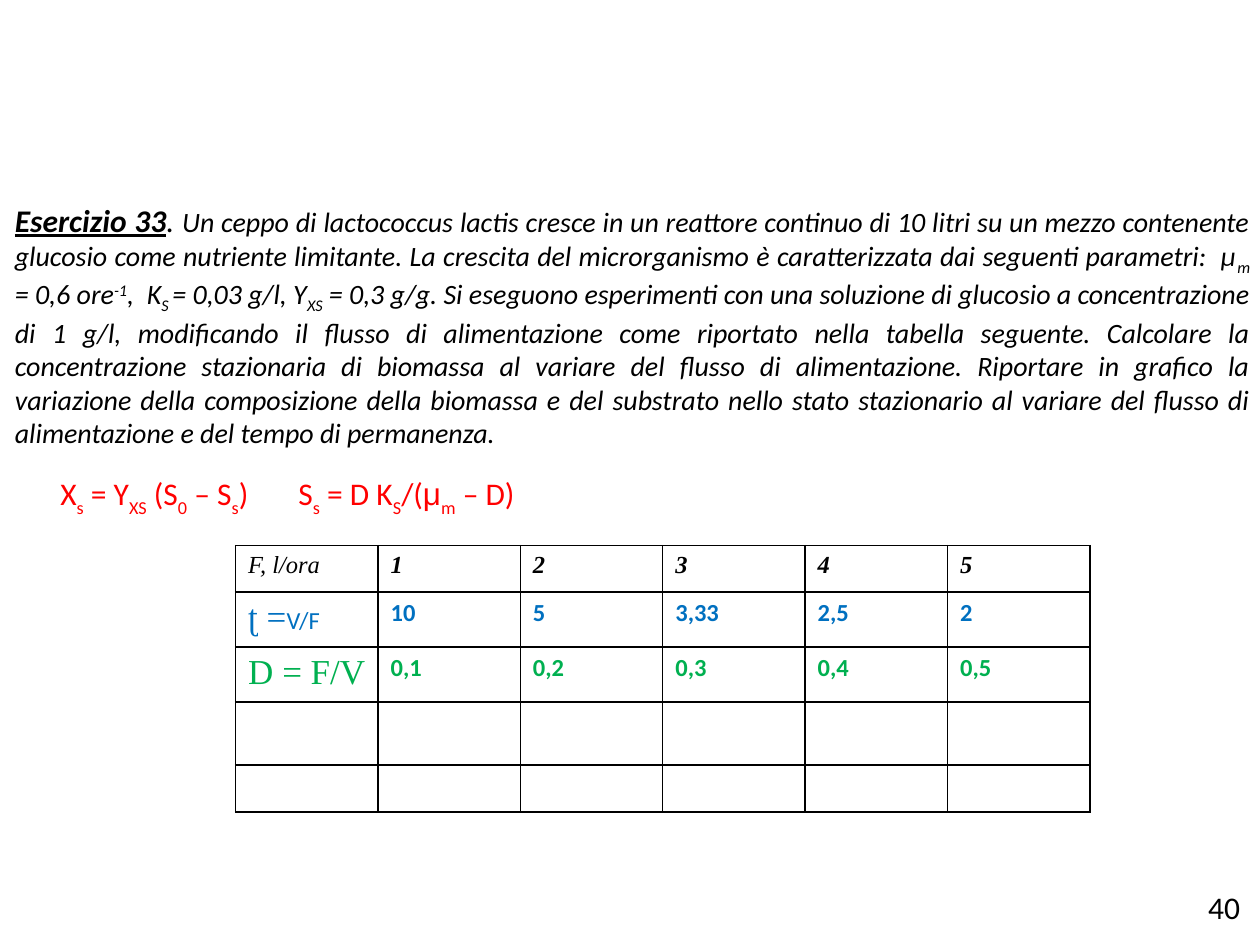
from lxml import etree
from pptx import Presentation
from pptx.dml.color import RGBColor
from pptx.enum import text as t
from pptx.oxml import ns
from pptx.util import Inches, Pt

THEME = {
    "black": RGBColor(0, 0, 0), "red": RGBColor(255, 0, 0),
    "blue": RGBColor(0x00, 0x70, 0xC0), "green": RGBColor(0x00, 0xB0, 0x50),
    "sans": "Calibri", "serif": "Times New Roman", "greek": "Arial",
    "large": Pt(20), "normal": Pt(18), "body": Pt(16), "cell": Pt(14),
}
LINE_WIDTH = Pt(1)


def add_runs(paragraph, runs, **common):
    """Add (text, baseline percent, own format) runs over a common format."""
    for text, baseline, own in runs:
        run = paragraph.add_run()
        run.text = text
        style = {"name": THEME["sans"], "size": THEME["normal"],
                 "color": THEME["black"], **common, **own}
        run.font.color.rgb = style.pop("color")
        for attribute, value in style.items():
            setattr(run.font, attribute, value)
        if baseline:
            run.font._element.set("baseline", str(baseline * 1000))


def add_text(place, runs, wrap=True, anchor=t.MSO_ANCHOR.TOP, align=t.PP_ALIGN.LEFT, **common):
    box = slide.shapes.add_textbox(*map(Inches, place))
    frame = box.text_frame
    frame.word_wrap = wrap
    frame.vertical_anchor = anchor
    paragraph = frame.paragraphs[0]
    paragraph.alignment = align
    add_runs(paragraph, runs, **common)


presentation = Presentation()
presentation.slide_width, presentation.slide_height = Inches(10), Inches(7.5)
slide = presentation.slides.add_slide(presentation.slide_layouts[6])

# Slide number
add_text((9.49, 7, 0.53, 0.5), [("40", 0, {})], wrap=False)

# Exercise
heading = {"size": THEME["normal"]}
exercise = [
    ("Esercizio 33", 0, {**heading, "bold": True, "underline": True}),
    (". ", 0, heading),
    ("Un ceppo di lactococcus lactis cresce in un reattore continuo di 10 litri su un "
     "mezzo contenente glucosio come nutriente limitante. La crescita del microrganismo "
     "è caratterizzata dai seguenti parametri:  μ", 0, {}),
    ("m", -25, {}), (" = 0,6 ore", 0, {}), ("-1", 30, {}), (",  K", 0, {}),
    ("S ", -25, {}), ("= 0,03 g/l, Y", 0, {}), ("XS", -25, {}),
    (" = 0,3 g/g. Si eseguono esperimenti con una soluzione di glucosio a concentrazione "
     "di 1 g/l, modificando il flusso di alimentazione come riportato nella tabella "
     "seguente. Calcolare la concentrazione stazionaria di biomassa al variare del flusso "
     "di alimentazione. Riportare in grafico la variazione della composizione della "
     "biomassa e del substrato nello stato stazionario al variare del flusso di "
     "alimentazione e del tempo di permanenza. ", 0, {}),
]
add_text((0.02, 1.57, 10, 2.02), exercise, anchor=t.MSO_ANCHOR.MIDDLE,
         align=t.PP_ALIGN.JUSTIFY, size=THEME["body"], italic=True)

# Results table
row_heights = [0.37, 0.43, 0.44, 0.5, 0.37]
column_count, column_width = 6, 1.13
header = {"name": THEME["serif"], "size": THEME["cell"], "italic": True}
time = {"size": THEME["cell"], "color": THEME["blue"]}
dilution = {"size": THEME["cell"], "color": THEME["green"]}
large_serif = {"name": THEME["serif"], "size": THEME["large"]}
rows = [
    (header, [("F, l/ora", 0, {})], ["1", "2", "3", "4", "5"]),
    (time, [("ʈ =", 0, large_serif), ("V/F", 0, {})], ["10", "5", "3,33", "2,5", "2"]),
    (dilution, [("D = F/V", 0, large_serif)], ["0,1", "0,2", "0,3", "0,4", "0,5"]),
]
table = slide.shapes.add_table(
    len(row_heights), column_count, Inches(1.87), Inches(4.33),
    Inches(column_width * column_count), Inches(sum(row_heights))).table
table.first_row = table.horz_banding = False
for column in table.columns:
    column.width = Inches(column_width)
for row, height in zip(table.rows, row_heights):
    row.height = Inches(height)

for cell in table.iter_cells():
    properties = cell._tc.get_or_add_tcPr()
    for side in ("lnL", "lnR", "lnT", "lnB"):
        line = etree.SubElement(properties, ns.qn(f"a:{side}"), w=str(LINE_WIDTH))
        fill = etree.SubElement(line, ns.qn("a:solidFill"))
        etree.SubElement(fill, ns.qn("a:srgbClr"), val=str(THEME["black"]))
    cell.fill.background()

for row_index, (style, label, values) in enumerate(rows):
    add_runs(table.cell(row_index, 0).text_frame.paragraphs[0], label, **style)
    for column_index, value in enumerate(values, start=1):
        paragraph = table.cell(row_index, column_index).text_frame.paragraphs[0]
        add_runs(paragraph, [(value, 0, {"bold": True})], **style)

# Empty rows keep the cell type size, so that they do not grow
for row_index in range(len(rows), len(row_heights)):
    for cell in table.rows[row_index].cells:
        etree.SubElement(cell.text_frame.paragraphs[0]._p, ns.qn("a:endParaRPr"),
                         sz=str(int(THEME["cell"].pt * 100)))

# Steady-state equations
biomass = [("X", 0, {}), ("s", -30, {}), (" = Y", 0, {}), ("XS", -30, {}), (" (S", 0, {}),
           ("0", -30, {}), (" – S", 0, {}), ("s", -30, {}), (")", 0, {})]
substrate = [("S", 0, {}), ("s", -30, {}), (" = D K", 0, {}), ("S", -30, {}), ("/(", 0, {}),
             ("μ", 0, {"name": THEME["greek"]}), ("m", -30, {}), (" – D)", 0, {})]
for left, width, equation in [(0.38, 5.09, biomass), (2.27, 5.05, substrate)]:
    add_text((left, 3.71, width, 0.4), equation, color=THEME["red"])

presentation.save("out.pptx")
